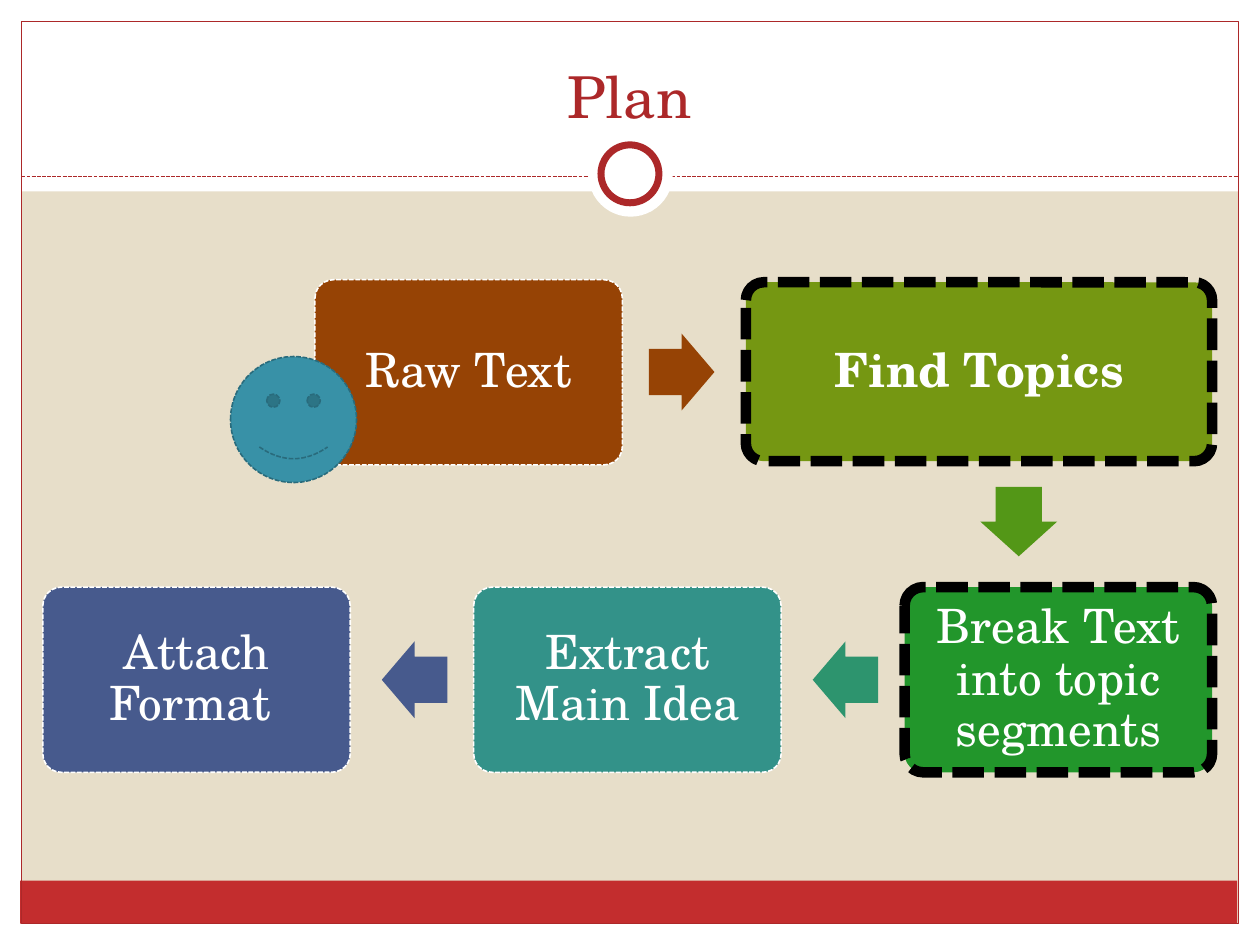
from pptx import Presentation
from pptx.dml.color import RGBColor
from pptx.enum.dml import MSO_LINE
from pptx.enum.shapes import MSO_CONNECTOR, MSO_SHAPE as Kind
from pptx.enum.text import MSO_ANCHOR, PP_ALIGN
from pptx.oxml.ns import qn
from pptx.util import Inches, Pt
from lxml.etree import SubElement

FONT = "TeX Gyre Schola"
WHITE, BLACK, RED = "FFFFFF", "000000", "AC2829"
THIN, THICK = (WHITE, 0.9, True), (BLACK, 6, True)

# Steps of the plan: text, (left, top, width, height), fill, border, bold
STEPS = [
    ("Raw Text", (2.5, 2.22, 2.44, 1.47), "964305", THIN, False),
    ("Find Topics", (5.92, 2.24, 3.7, 1.42), "759712", THICK, True),
    ("Break Text into topic segments", (7.18, 4.66, 2.44, 1.47), "22962B", THICK, False),
    ("Extract Main Idea", (3.76, 4.66, 2.44, 1.47), "339289", THIN, False),
    ("Attach Format ", (0.34, 4.66, 2.44, 1.47), "475A8D", THIN, False),
]
# Arrows from each step to the next: turn, length, fill
ARROWS = [(0, 0.52, "964305"), (90, 0.55, "539717"),
          (180, 0.52, "2D946E"), (180, 0.52, "475A8D")]
THICKNESS, BACK = 0.61, 0.02

# Frame of the slide: kind, box, fill, border
FRAME = [
    (Kind.RECTANGLE, (0, 7.33, 10, 0.17), WHITE, None),
    (Kind.RECTANGLE, (0, 0, 10, 1.52), WHITE, None),
    (Kind.RECTANGLE, (0, 0, 0.17, 7.5), WHITE, None),
    (Kind.RECTANGLE, (9.83, 0, 0.17, 7.5), WHITE, None),
    (Kind.RECTANGLE, (0.16, 6.99, 9.66, 0.34), "C32D2E", None),
    (Kind.RECTANGLE, (0.17, 0.17, 9.66, 7.16), None, (RED, 0.75, False)),
]
RINGS = [
    (Kind.OVAL, (4.67, 1.05, 0.67, 0.67), WHITE, None),
    (Kind.OVAL, (4.77, 1.15, 0.46, 0.46), WHITE, (RED, 4, False)),
]

prs = Presentation()
prs.slide_width, prs.slide_height = Inches(10), Inches(7.5)
slide = prs.slides.add_slide(prs.slide_layouts[5])
shapes = slide.shapes


def paint(fill, color):
    fill.solid()
    fill.fore_color.rgb = RGBColor.from_string(color)


def stroke(line, color, width, dashed):
    paint(line.fill, color)
    line.width = Pt(width)
    if dashed:
        line.dash_style = MSO_LINE.SQUARE_DOT


def draw(kind, box, fill, border=None, adjust=()):
    shape = shapes.add_shape(kind, *map(Inches, box))
    shape.shadow.inherit = False
    if fill:
        paint(shape.fill, fill)
    else:
        shape.fill.background()
    if border:
        stroke(shape.line, *border)
    else:
        shape.line.fill.background()
    for i, value in enumerate(adjust):
        shape.adjustments[i] = value
    return shape


def write(shape, text, size, color, anchor, bold=False):
    frame = shape.text_frame
    frame.text = text
    frame.word_wrap = True
    frame.vertical_anchor = anchor
    par = frame.paragraphs[0]
    par.alignment = PP_ALIGN.CENTER
    font = par.runs[0].font
    font.name, font.size, font.bold = FONT, Pt(size), bold
    font.color.rgb = RGBColor.from_string(color)
    return frame


# Background and frame
paint(slide.background.fill, "E7DEC9")
for part in FRAME:
    draw(*part)
rule = shapes.add_connector(MSO_CONNECTOR.STRAIGHT, *map(Inches, (0.17, 1.4, 9.83, 1.4)))
stroke(rule.line, RED, 0.75, True)
SubElement(rule._element.spPr, qn("a:effectLst"))
for part in RINGS:
    draw(*part)

# Title, brought in front of the white band
title = shapes.title
title.left, title.top, title.width, title.height = map(Inches, (0.33, 0.25, 9.33, 0.83))
write(title, "Plan", 33, RED, MSO_ANCHOR.BOTTOM)
shapes._spTree.append(title._element)

# Steps
for text, box, fill, border, bold in STEPS:
    step = draw(Kind.ROUNDED_RECTANGLE, box, fill, border, [0.1])
    frame = write(step, text, 27, WHITE, MSO_ANCHOR.MIDDLE, bold)
    frame.paragraphs[0].line_spacing = 0.9
    frame.margin_left = frame.margin_right = Inches(0.11)
    frame.margin_top = frame.margin_bottom = Inches(0.11)

# Arrows, in the middle of each gap and slightly nearer to the step they leave
for (turn, size, fill), start, end in zip(ARROWS, STEPS, STEPS[1:]):
    (ax, ay, aw, ah), (bx, by, bw, bh) = start[1], end[1]
    x, y = (ax + bx + (aw + bw) / 2) / 2, (ay + by + (ah + bh) / 2) / 2
    if turn == 0:
        x = (ax + aw + bx) / 2 - BACK
    elif turn == 90:
        y = (ay + ah + by) / 2 - BACK
    else:
        x = (ax + bx + bw) / 2 + BACK
    box = (x - size / 2, y - THICKNESS / 2, size, THICKNESS)
    draw(Kind.RIGHT_ARROW, box, fill, None, [0.6, 0.5]).rotation = turn

# Smiling marker on the first step
draw(Kind.SMILEY_FACE, (1.83, 2.83, 1, 1), "3891A7", ("296B7C", 0.9, True))

prs.save("out.pptx")
